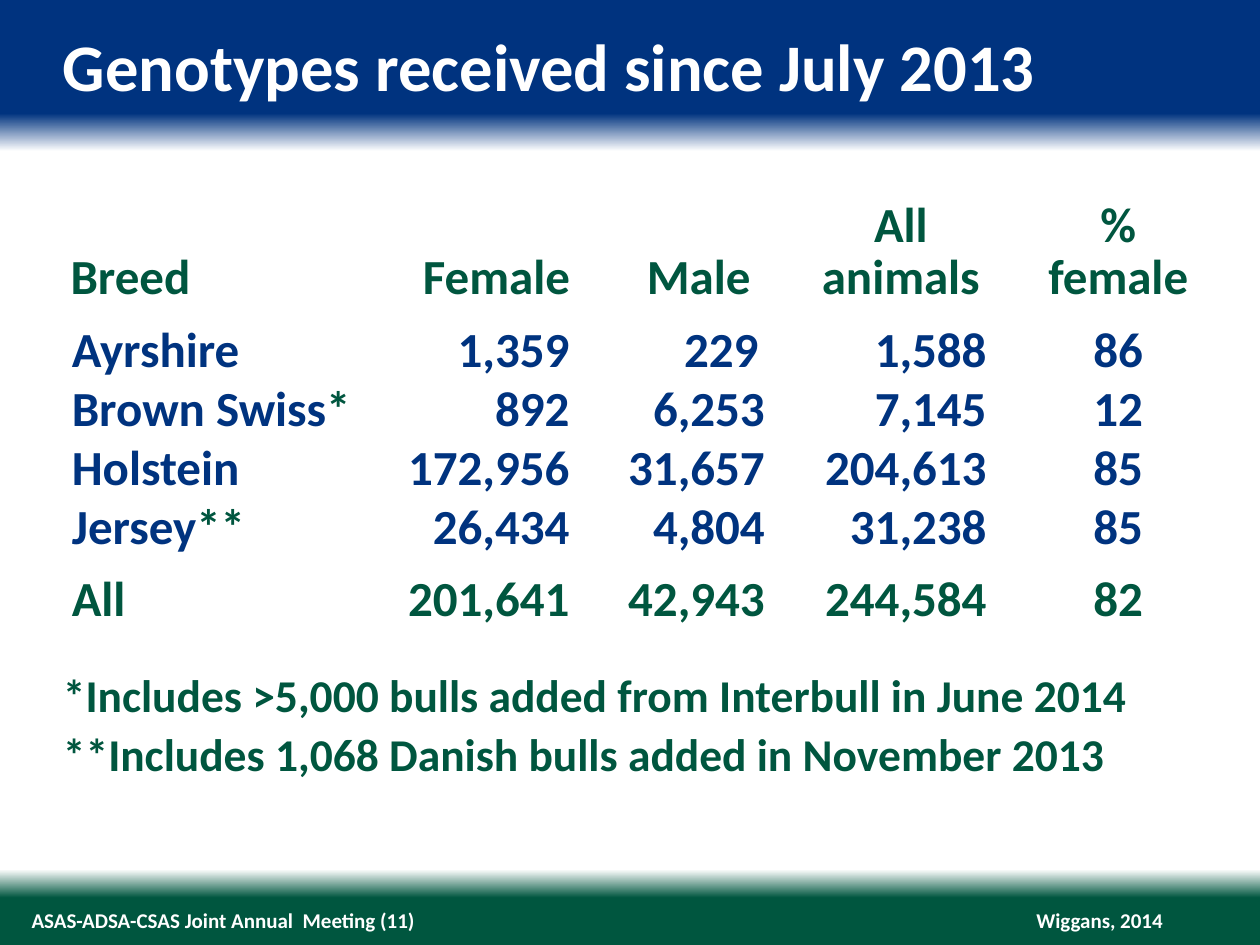
from lxml import etree
from pptx import Presentation
from pptx import util as u
from pptx.dml.color import RGBColor
from pptx.enum import text
from pptx.oxml.ns import qn

COLORS = {"blue": "00337F", "green": "00563F", "white": "FFFFFF"}
LEFT, CENTER, RIGHT = text.PP_ALIGN.LEFT, text.PP_ALIGN.CENTER, text.PP_ALIGN.RIGHT


class SlideBuilder:
    """Holds the style and the current slide."""

    font = "Calibri"

    def __init__(self, slide):
        self.s = slide

    def style(self, p, size, color, align=LEFT):
        p.alignment = align
        f = p.font
        f.name, f.size, f.bold = self.font, u.Pt(size), True
        f.color.rgb = RGBColor.from_string(COLORS[color])

    def background(self, stops):
        fill = self.s.background.fill
        fill.gradient()
        fill.gradient_angle = 270
        gs_list = next(self.s.element.iter(qn("a:gsLst")))
        for gs in list(gs_list):
            gs_list.remove(gs)
        for percent, color in stops:
            gs = etree.SubElement(gs_list, qn("a:gs"), pos=str(percent * 1000))
            etree.SubElement(gs, qn("a:srgbClr"), val=COLORS[color])

    def textbox(self, box, lines, size, color, align=LEFT, wrap=True,
                anchor=text.MSO_ANCHOR.TOP, gap=0):
        tf = self.s.shapes.add_textbox(*map(u.Inches, box)).text_frame
        tf.margin_left = tf.margin_top = tf.margin_right = tf.margin_bottom = 0
        tf.word_wrap, tf.vertical_anchor = wrap, anchor
        tf.auto_size = text.MSO_AUTO_SIZE.SHAPE_TO_FIT_TEXT
        for i, line in enumerate(lines):
            p = tf.paragraphs[0] if i == 0 else tf.add_paragraph()
            p.text = line
            if i < len(lines) - 1:
                p.space_after = u.Pt(gap)
            self.style(p, size, color, align)

    def table(self, left, top, widths, heights):
        frame = self.s.shapes.add_table(
            len(heights), len(widths), u.Inches(left), u.Inches(top),
            u.Inches(sum(widths)), u.Inches(sum(heights)))
        table = frame.table
        table.first_row = table.horz_banding = False
        for col, width in zip(table.columns, widths):
            col.width = u.Inches(width)
        for row, height in zip(table.rows, heights):
            row.height = u.Inches(height)
        return table

    def cell(self, cell, value, color, align, margins, spacing=None):
        cell.fill.background()
        cell.vertical_anchor = text.MSO_ANCHOR.BOTTOM
        (cell.margin_left, cell.margin_top,
         cell.margin_right, cell.margin_bottom) = map(u.Inches, margins)
        tf = cell.text_frame
        tf.text = value
        for p in tf.paragraphs:
            if spacing:
                p.line_spacing = u.Pt(spacing)
            self.style(p, 28, color, align)

    def footnote_mark(self, cell, mark):
        r = cell.text_frame.paragraphs[0].add_run()
        r.text = mark
        r.font.color.rgb = RGBColor.from_string(COLORS["green"])


HEADERS = ["Breed", "Female", "Male", "All\nanimals", "% female"]
ROWS = [
    ["Ayrshire", "1,359", "229", "1,588", "86"],
    ["Brown Swiss", "892", "6,253", "7,145", "12"],
    ["Holstein", "172,956", "31,657", "204,613", "85"],
    ["Jersey", "26,434", "4,804", "31,238", "85"],
    ["All", "201,641", "42,943", "244,584", "82"],
]
MARKS = {"Brown Swiss": "*", "Jersey": "**"}
ALIGNS = [LEFT, RIGHT, RIGHT, RIGHT, CENTER]
# Left and right cell margins, by column
HEADER_MARGINS = [(0.07, 0.07), (0, 0), (0.35, 0), (0, 0), (0.07, 0.07)]
BODY_MARGINS = [(0.08, 0), (0, 0.15), (0, 0), (0, 0.4), (0.07, 0.07)]


def main():
    prs = Presentation()
    prs.slide_width, prs.slide_height = u.Inches(10), u.Inches(7.5)
    b = SlideBuilder(prs.slides.add_slide(prs.slide_layouts[6]))

    # Background bands
    b.background([(0, "blue"), (12, "blue"), (16, "white"),
                  (92, "white"), (95, "green"), (100, "green")])

    # Footer
    middle = text.MSO_ANCHOR.MIDDLE
    b.textbox((8.21, 7.2, 1.02, 0.2), ["Wiggans, 2014"], 12, "white",
              RIGHT, wrap=False, anchor=middle)
    b.textbox((0.25, 7.2, 5.22, 0.2), ["ASAS-ADSA-CSAS Joint Annual  Meeting (11)"],
              12, "white", anchor=middle)

    # Title
    b.textbox((0.5, 0.2, 9, 0.64), ["Genotypes received since July 2013"], 38, "white")

    # Genotype counts; the first and last body rows stand a little apart
    table = b.table(0.49, 1.61, [2.72, 1.46, 1.4, 2.16, 1.29],
                    [0.83, 0.57, 0.47, 0.47, 0.47, 0.57])
    for c, (label, (left, right)) in enumerate(zip(HEADERS, HEADER_MARGINS)):
        b.cell(table.cell(0, c), label, "green", CENTER if c else LEFT,
               (left, 0, right, 0), spacing=30)
    for r, row in enumerate(ROWS, 1):
        color = "green" if r == len(ROWS) else "blue"
        above = 0.1 if r in (1, len(ROWS)) else 0
        for c, (value, align) in enumerate(zip(row, ALIGNS)):
            left, right = BODY_MARGINS[c]
            if value == "229":
                right = 0.05
            b.cell(table.cell(r, c), value, color, align, (left, above, right, 0))
        if row[0] in MARKS:
            b.footnote_mark(table.cell(r, 0), MARKS[row[0]])

    # Footnotes
    b.textbox((0.5, 5.29, 9, 0.92),
              ["*Includes >5,000 bulls added from Interbull in June 2014",
               "**Includes 1,068 Danish bulls added in November 2013"],
              26, "green", gap=3)

    prs.save("out.pptx")


if __name__ == "__main__":
    main()
